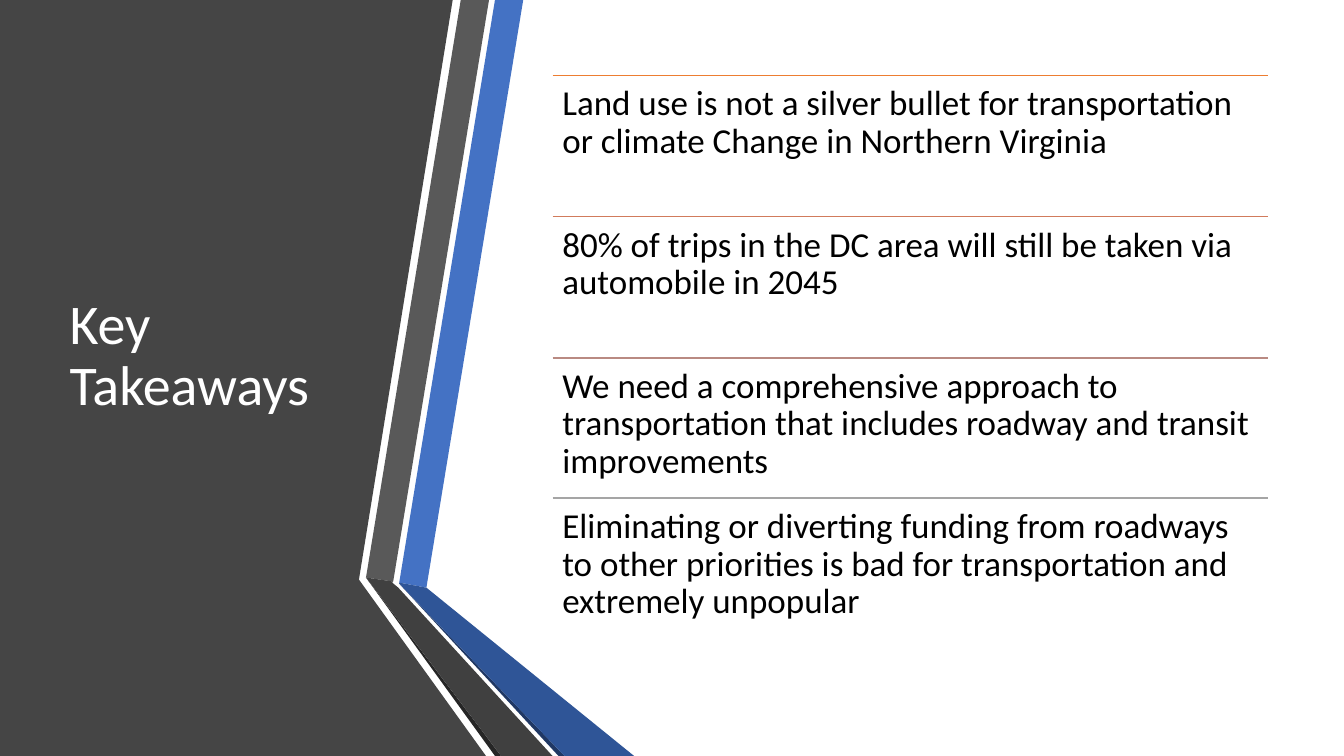
from pptx import Presentation
from pptx.dml.color import RGBColor
from pptx.enum.shapes import MSO_CONNECTOR
from pptx.enum.text import MSO_ANCHOR, MSO_AUTO_SIZE, PP_ALIGN
from pptx.oxml import parse_xml
from pptx.oxml.ns import nsdecls
from pptx.util import Pt

SCALE = 9144  # EMU per px, 100 px to the inch
WIDTH, HEIGHT = 1333, 750

WHITE = RGBColor(0xFF, 0xFF, 0xFF)
BLACK = RGBColor(0x00, 0x00, 0x00)
PANEL = RGBColor(0x45, 0x45, 0x45)
BLUE = RGBColor(0x44, 0x72, 0xC4)
BLUE_DARK = RGBColor(0x2F, 0x55, 0x97)
BLUE_EDGE = RGBColor(0x20, 0x38, 0x64)
GREY = RGBColor(0x59, 0x59, 0x59)
GREY_DARK = RGBColor(0x40, 0x40, 0x40)
GREY_EDGE = RGBColor(0x26, 0x26, 0x26)

# Panel and folded ribbons, back to front
BANDS = [
    (PANEL, [(0, 0), (449, 0), (356, 575), (482, 750), (0, 750)]),
    (BLUE, [(396, 578), (423, 583), (519, 0), (491, 0)]),
    (GREY, [(485, 0), (457, 0), (363, 573), (390, 577)]),
    (GREY_EDGE, [(363, 573), (491, 750), (497, 750)]),
    (BLUE_EDGE, [(396, 579), (554, 750), (560, 750)]),
    (BLUE_DARK, [(396, 579), (560, 750), (629, 750), (423, 583), (396, 578)]),
    (GREY_DARK, [(548, 750), (395, 583), (389, 578), (390, 577), (363, 573),
                 (497, 750)]),
]

# Each takeaway with the colour of the rule above it
TAKEAWAYS = [
    (RGBColor(0xED, 0x7D, 0x31),
     "Land use is not a silver bullet for transportation or climate Change "
     "in Northern Virginia"),
    (RGBColor(0xD1, 0x7B, 0x5C),
     "80% of trips in the DC area will still be taken via automobile in 2045"),
    (RGBColor(0xB9, 0x8A, 0x82),
     "We need a comprehensive approach to transportation that includes "
     "roadway and transit improvements"),
    (RGBColor(0xA5, 0xA5, 0xA5),
     "Eliminating or diverting funding from roadways to other priorities is "
     "bad for transportation and extremely unpopular"),
]
LIST_LEFT, LIST_TOP, LIST_WIDTH, LIST_HEIGHT = 548, 75, 710, 559


def px(n):
    return n * SCALE


class SlideBuilder:
    font = "Calibri"
    line_spacing = 0.9

    def __init__(self, s):
        self.s = s

    def polygon(self, color, points):
        builder = self.s.shapes.build_freeform(*points[0], scale=SCALE)
        builder.add_line_segments(points[1:], close=True)
        sp = builder.convert_to_shape()
        sp.shadow.inherit = False
        sp.fill.solid()
        sp.fill.fore_color.rgb = color
        sp.line.fill.background()

    def rule(self, x, y, width, color):
        line = self.s.shapes.add_connector(
            MSO_CONNECTOR.STRAIGHT, px(x), px(y), px(x + width), px(y))
        line.line.color.rgb = color
        line.line.width = Pt(1)
        sp_pr = line.element.spPr
        sp_pr.append(parse_xml(f"<a:effectLst {nsdecls('a')}/>"))

    def fill_text(self, tf, text, size, color, anchor):
        tf.text = text
        tf.word_wrap = True
        tf.auto_size = MSO_AUTO_SIZE.NONE
        tf.vertical_anchor = anchor
        p = tf.paragraphs[0]
        p.alignment = PP_ALIGN.LEFT
        p.line_spacing = self.line_spacing
        r = p.runs[0]
        r.font.name = self.font
        r.font.size = Pt(size)
        r.font.color.rgb = color

    def title(self, text, x, y, width, height):
        sp = self.s.shapes.title
        sp.left, sp.top, sp.width, sp.height = map(px, (x, y, width, height))
        self.fill_text(sp.text_frame, text, 40, WHITE, MSO_ANCHOR.MIDDLE)
        # Bring the title in front of the panel
        sp.element.getparent().append(sp.element)

    def text(self, text, x, y, width, height):
        sp = self.s.shapes.add_textbox(*map(px, (x, y, width, height)))
        tf = sp.text_frame
        tf.margin_left = tf.margin_right = px(10)
        tf.margin_top = tf.margin_bottom = px(10)
        self.fill_text(tf, text, 25, BLACK, MSO_ANCHOR.TOP)


def main():
    prs = Presentation()
    prs.slide_width, prs.slide_height = px(WIDTH), px(HEIGHT)
    s = prs.slides.add_slide(prs.slide_layouts[5])
    slide = SlideBuilder(s)

    # Left panel and ribbons
    for color, points in BANDS:
        slide.polygon(color, points)
    slide.title("Key Takeaways", 59, 75, 304, 558)

    # Ruled list of takeaways, in equal rows
    row = LIST_HEIGHT / len(TAKEAWAYS)
    for i, (color, text) in enumerate(TAKEAWAYS):
        y = LIST_TOP + round(i * row)
        slide.rule(LIST_LEFT, y, LIST_WIDTH, color)
        slide.text(text, LIST_LEFT, y, LIST_WIDTH, round(row))

    prs.save("out.pptx")


if __name__ == "__main__":
    main()
